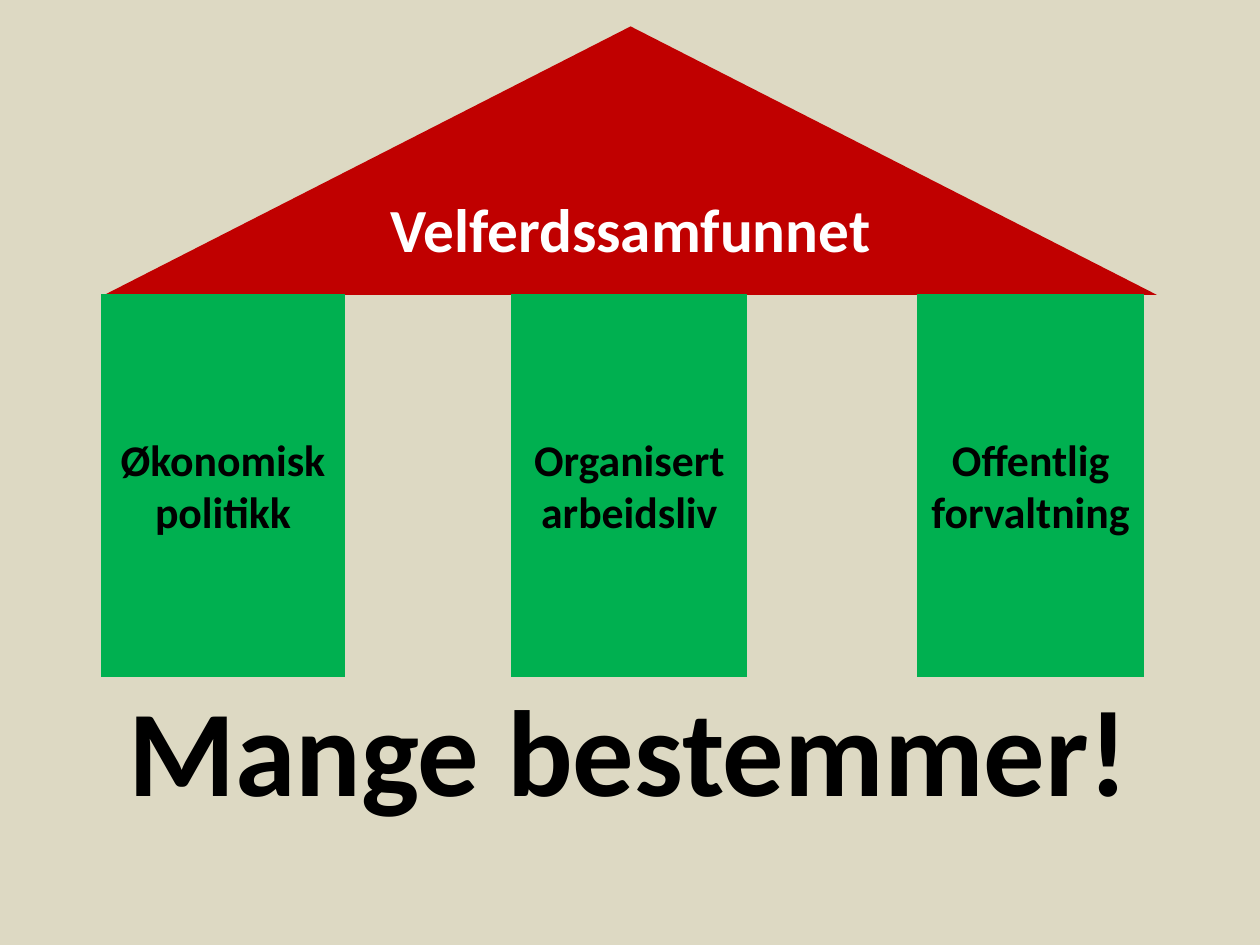
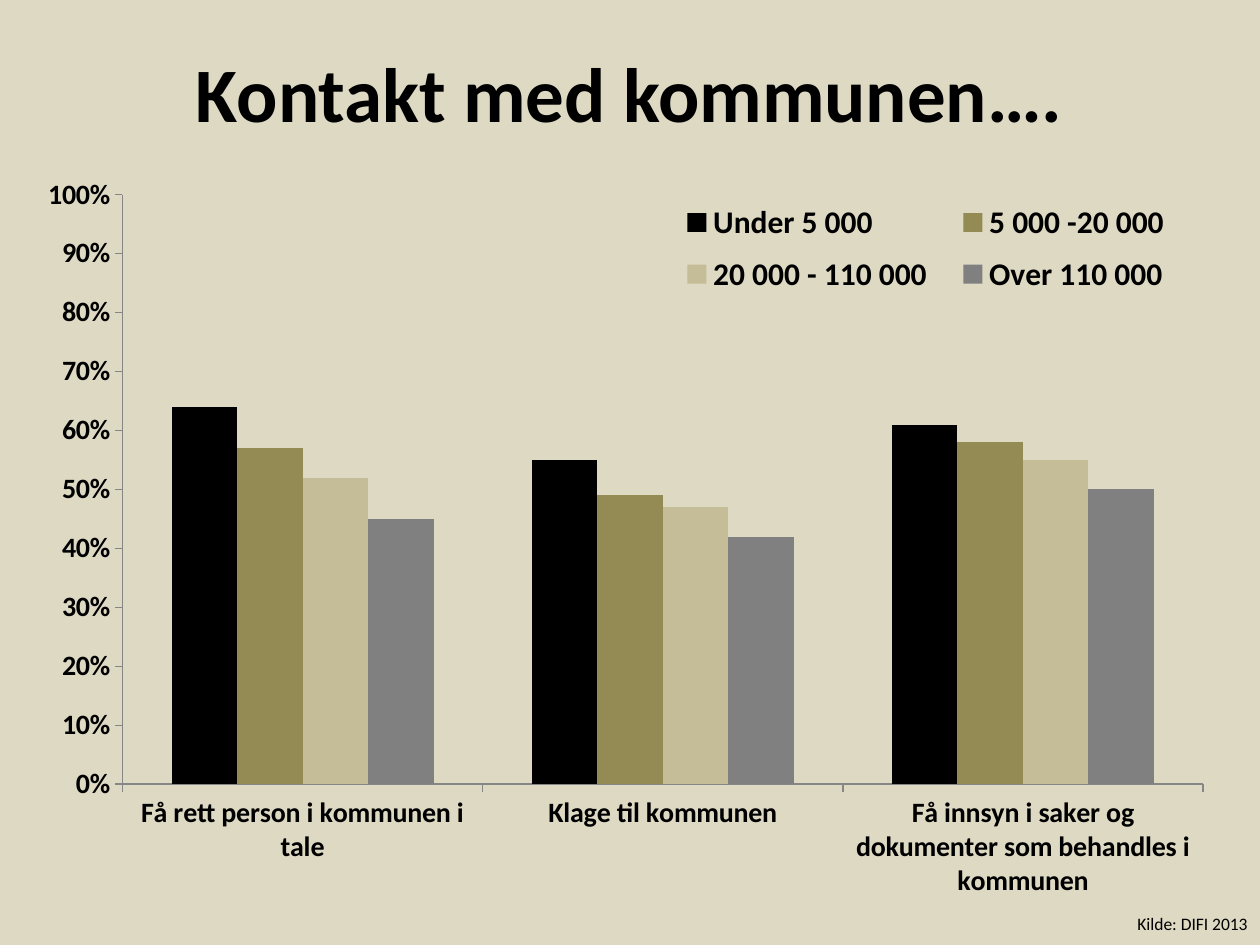
from dataclasses import dataclass

from lxml import etree
from pptx import Presentation
from pptx.chart.data import CategoryChartData
from pptx.dml.color import RGBColor
from pptx.enum.chart import XL_CHART_TYPE, XL_LEGEND_POSITION, XL_TICK_MARK
from pptx.enum.shapes import MSO_SHAPE
from pptx.enum.text import MSO_ANCHOR, PP_ALIGN
from pptx.oxml.ns import qn
from pptx.util import Inches, Pt

COLUMNS = XL_CHART_TYPE.COLUMN_CLUSTERED
RIGHT_SIDE = XL_LEGEND_POSITION.RIGHT
OUTSIDE = XL_TICK_MARK.OUTSIDE
TRIANGLE = MSO_SHAPE.ISOSCELES_TRIANGLE
BLOCK = MSO_SHAPE.FLOWCHART_PROCESS
TOP, MIDDLE = MSO_ANCHOR.TOP, MSO_ANCHOR.MIDDLE
CENTER, RIGHT = PP_ALIGN.CENTER, PP_ALIGN.RIGHT

FONT = "Calibri"
SAND, RED, GREEN = "DDD9C3", "C00000", "00B050"
BLACK, WHITE, AXIS = "000000", "FFFFFF", "868686"
PILLAR_TOP, PILLAR_HEIGHT = 2.33, 3.04


@dataclass
class Pillar:
    left: float
    width: float
    text: str


@dataclass
class Series:
    name: str
    values: tuple[float, ...]
    color: str


PILLARS = [
    Pillar(0.8, 1.94, "Økonomisk politikk"),
    Pillar(4.06, 1.87, "Organisert\narbeidsliv"),
    Pillar(7.28, 1.8, "Offentlig forvaltning"),
]
TOPICS = [
    "Få rett person i kommunen i tale",
    "Klage til kommunen",
    "Få innsyn i saker og dokumenter som behandles i kommunen",
]
SIZES = [
    Series("Under 5 000", (0.64, 0.55, 0.61), BLACK),
    Series("5 000 -20 000", (0.57, 0.49, 0.58), "948A54"),
    Series("20 000 - 110 000", (0.52, 0.47, 0.55), "C4BD97"),
    Series("Over 110 000", (0.45, 0.42, 0.5), "808080"),
]


def rgb(code: str) -> RGBColor:
    return RGBColor.from_string(code)


def paint(fill, code: str) -> None:
    fill.solid()
    fill.fore_color.rgb = rgb(code)


def style(font, size: float, color: str = BLACK, bold: bool = True) -> None:
    font.name = FONT
    font.size = Pt(size)
    font.bold = bold
    font.color.rgb = rgb(color)


def write(shape, text: str, *, size: float, color: str = BLACK, bold: bool = True,
          align=CENTER, anchor=MIDDLE) -> None:
    frame = shape.text_frame
    frame.word_wrap = True
    frame.vertical_anchor = anchor
    frame.text = text
    for para in frame.paragraphs:
        para.alignment = align
        for run in para.runs:
            style(run.font, size, color, bold)


def add_slide(prs):
    slide = prs.slides.add_slide(prs.slide_layouts[6])
    paint(slide.background.fill, SAND)
    return slide


def add_block(slide, kind, box: tuple[float, ...], fill: str | None = None):
    shape = slide.shapes.add_shape(kind, *map(Inches, box))
    shape.shadow.inherit = False
    shape.line.fill.background()
    if fill:
        paint(shape.fill, fill)
    else:
        shape.fill.background()
    return shape


def add_label(slide, box: tuple[float, ...], text: str, **form) -> None:
    write(slide.shapes.add_textbox(*map(Inches, box)), text, **form)


def set_layout(part, index: int, box: tuple[float, ...], inner: bool = False) -> None:
    """Place a chart part by fractions of the chart's width and height."""
    for old in part.findall(qn("c:layout")):
        part.remove(old)
    layout = etree.Element(qn("c:layout"))
    manual = etree.SubElement(layout, qn("c:manualLayout"))
    items = [("layoutTarget", "inner")] if inner else []
    items += [("xMode", "edge"), ("yMode", "edge")]
    items += zip("xywh", map(str, box))
    for tag, value in items:
        etree.SubElement(manual, qn(f"c:{tag}")).set("val", value)
    part.insert(index, layout)


def add_columns(slide, box: tuple[float, ...]) -> None:
    data = CategoryChartData(number_format="0%")
    data.categories = TOPICS
    for item in SIZES:
        data.add_series(item.name, item.values)
    chart = slide.shapes.add_chart(COLUMNS, *map(Inches, box), data).chart
    chart.has_title = False
    style(chart.font, 16)

    plot = chart.plots[0]
    plot.gap_width = 150
    plot.overlap = 0
    plot.vary_by_categories = False
    for series, item in zip(plot.series, SIZES):
        paint(series.format.fill, item.color)
        series.invert_if_negative = False

    for axis in (chart.category_axis, chart.value_axis):
        axis.has_major_gridlines = False
        axis.major_tick_mark = OUTSIDE
        axis.format.line.color.rgb = rgb(AXIS)
        axis.format.line.width = Pt(0.75)
        style(axis.tick_labels.font, 16)
    scale = chart.value_axis
    scale.minimum_scale, scale.maximum_scale, scale.major_unit = 0, 1, 0.1
    scale.tick_labels.number_format = "0%"
    scale.tick_labels.number_format_is_linked = False

    chart.has_legend = True
    legend = chart.legend
    legend.position = RIGHT_SIDE
    legend.include_in_layout = False
    style(legend.font, 18)
    set_layout(legend._element, 1, (0.53, 0.02, 0.44, 0.16))
    area = chart._chartSpace.find(f".//{qn('c:plotArea')}")
    set_layout(area, 0, (0.081, 0.027, 0.9, 0.805), inner=True)


def build_house(prs) -> None:
    slide = add_slide(prs)
    roof = add_block(slide, TRIANGLE, (0.83, 0.21, 8.35, 2.13), RED)
    write(roof, "Velferdssamfunnet", size=35, color=WHITE)
    for item in PILLARS:
        box = (item.left, PILLAR_TOP, item.width, PILLAR_HEIGHT)
        write(add_block(slide, BLOCK, box, GREEN), item.text, size=25)
    base = add_block(slide, BLOCK, (0.67, 5.4, 8.64, 1.06))
    write(base, "Mange bestemmer!", size=70)


def build_contact(prs) -> None:
    slide = add_slide(prs)
    add_label(slide, (0.5, 0.3, 9, 0.85), "Kontakt med kommunen….", size=44)
    add_columns(slide, (0.2, 1.39, 9.53, 5.81))
    add_label(slide, (7.87, 7.2, 2.13, 0.27), "Kilde: DIFI 2013",
              size=10, bold=False, align=RIGHT, anchor=TOP)


def main() -> None:
    prs = Presentation()
    prs.slide_width, prs.slide_height = Inches(10), Inches(7.5)
    build_house(prs)
    build_contact(prs)
    prs.save("out.pptx")


if __name__ == "__main__":
    main()
